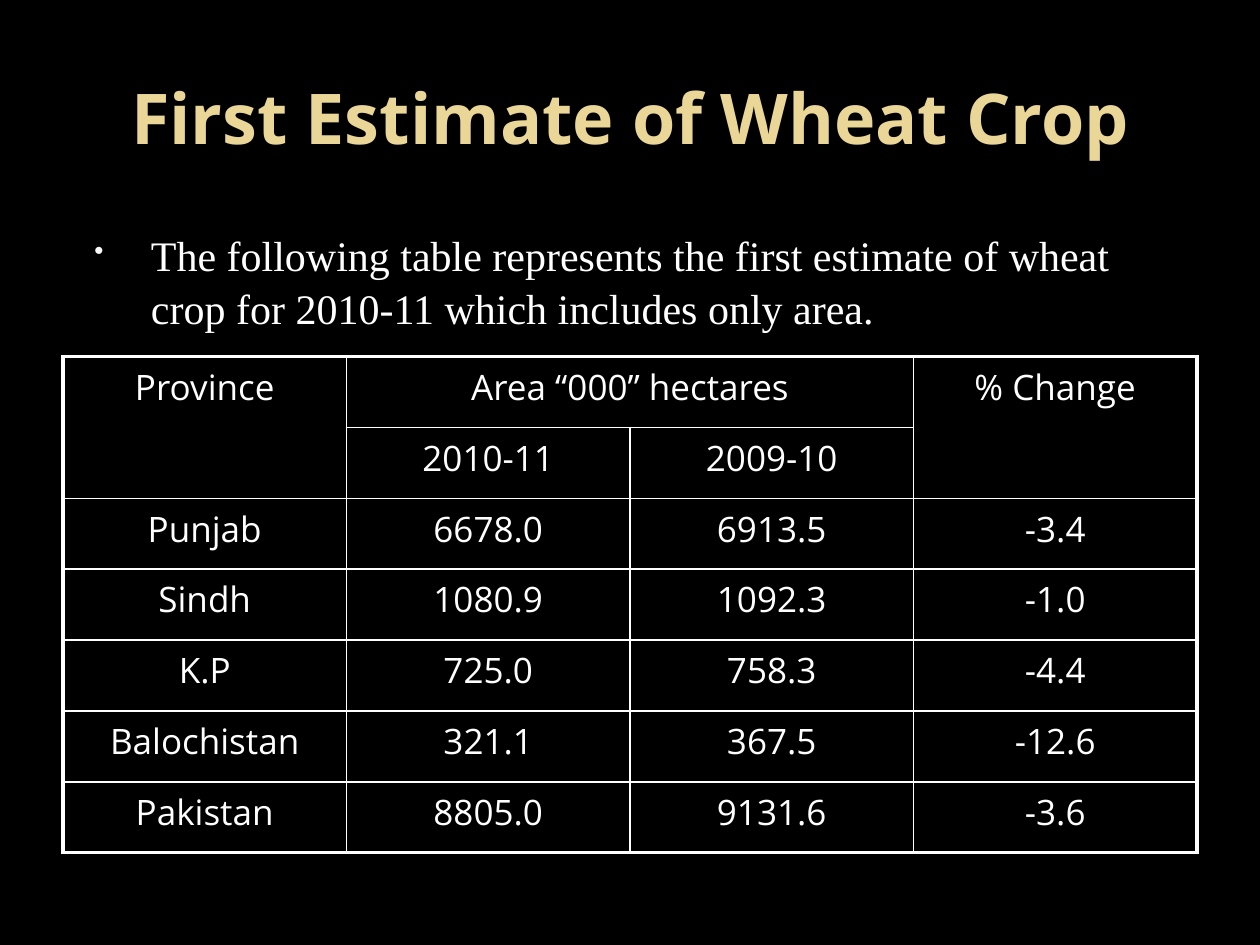
"""Build a slide with the first wheat crop estimate by province."""
from lxml.etree import SubElement
from pptx import Presentation
from pptx.dml.color import RGBColor
from pptx.enum.text import MSO_ANCHOR, PP_ALIGN
from pptx.oxml.ns import qn
from pptx.util import Inches, Pt

BLACK = RGBColor(0x00, 0x00, 0x00)
WHITE = RGBColor(0xFF, 0xFF, 0xFF)
GOLD = RGBColor(0xEA, 0xD6, 0x96)
ROWS = [
    ["Province", "Area “000” hectares", "", "% Change"],
    ["", "2010-11", "2009-10", ""],
    ["Punjab", "6678.0", "6913.5", "-3.4"],
    ["Sindh", "1080.9", "1092.3", "-1.0"],
    ["K.P", "725.0", "758.3", "-4.4"],
    ["Balochistan", "321.1", "367.5", "-12.6"],
    ["Pakistan", "8805.0", "9131.6", "-3.6"],
]
LAST_ROW, LAST_COLUMN = len(ROWS) - 1, len(ROWS[0]) - 1


def style(para, font_name, size, color, bold=False):
    for span in para.runs:
        span.font.name = font_name
        span.font.size = Pt(size)
        span.font.color.rgb = color
        span.font.bold = bold


def add_border(cell, side, width):
    line = SubElement(cell._tc.get_or_add_tcPr(), qn(f"a:{side}"), w=str(Pt(width)))
    fill = SubElement(line, qn("a:solidFill"))
    SubElement(fill, qn("a:srgbClr"), val=str(WHITE))


deck = Presentation()
deck.slide_width, deck.slide_height = Inches(10), Inches(7.5)
page = deck.slides.add_slide(deck.slide_layouts[6])
page.background.fill.solid()
page.background.fill.fore_color.rgb = BLACK
margin = deck.slide_width // 20
content_width = deck.slide_width - 2 * margin

title_box = page.shapes.add_textbox(margin, Inches(0.3), content_width, Inches(1.25))
title_box.text_frame.word_wrap = True
title_box.text_frame.vertical_anchor = MSO_ANCHOR.MIDDLE
title = title_box.text_frame.paragraphs[0]
title.text = "First Estimate of Wheat Crop"
title.alignment = PP_ALIGN.CENTER
style(title, "Open Sans", 40, GOLD, bold=True)

intro_box = page.shapes.add_textbox(margin, Inches(1.75), content_width, Inches(2.39))
intro_box.text_frame.word_wrap = True
intro = intro_box.text_frame.paragraphs[0]
intro.text = ("The following table represents the first estimate of wheat "
              "crop for 2010-11 which includes only area.")
intro.line_spacing = 1.05
intro.space_before = Pt(2)
style(intro, "Times New Roman", 24, WHITE)
bullet = intro._p.get_or_add_pPr()
bullet.set("marL", str(Inches(0.6)))
bullet.set("indent", str(Inches(-0.45)))
bullet_color = SubElement(bullet, qn("a:buClr"))
SubElement(bullet_color, qn("a:srgbClr"), val="F9F9F9")
SubElement(bullet, qn("a:buSzPct"), val="65000")
SubElement(bullet, qn("a:buChar"), char="•")

table = page.shapes.add_table(len(ROWS), len(ROWS[0]), margin, Inches(2.83),
                              content_width, Inches(3.94)).table
for row in table.rows:
    row.height = Inches(3.94) // len(ROWS)
for row_index, values in enumerate(ROWS):
    for column_index, value in enumerate(values):
        cell = table.cell(row_index, column_index)
        para = cell.text_frame.paragraphs[0]
        para.text = value
        para.alignment = PP_ALIGN.CENTER
        style(para, "Open Sans", 20, WHITE)
        outer_sides = {"lnL": column_index == 0, "lnR": column_index == LAST_COLUMN,
                       "lnT": row_index == 0, "lnB": row_index == LAST_ROW}
        for side, is_outer in outer_sides.items():
            add_border(cell, side, 2.25 if is_outer else 1)
        cell.fill.background()

for first, last in [((0, 0), (1, 0)), ((0, 1), (0, 2)), ((0, 3), (1, 3))]:
    table.cell(*first).merge(table.cell(*last))

deck.save("out.pptx")
